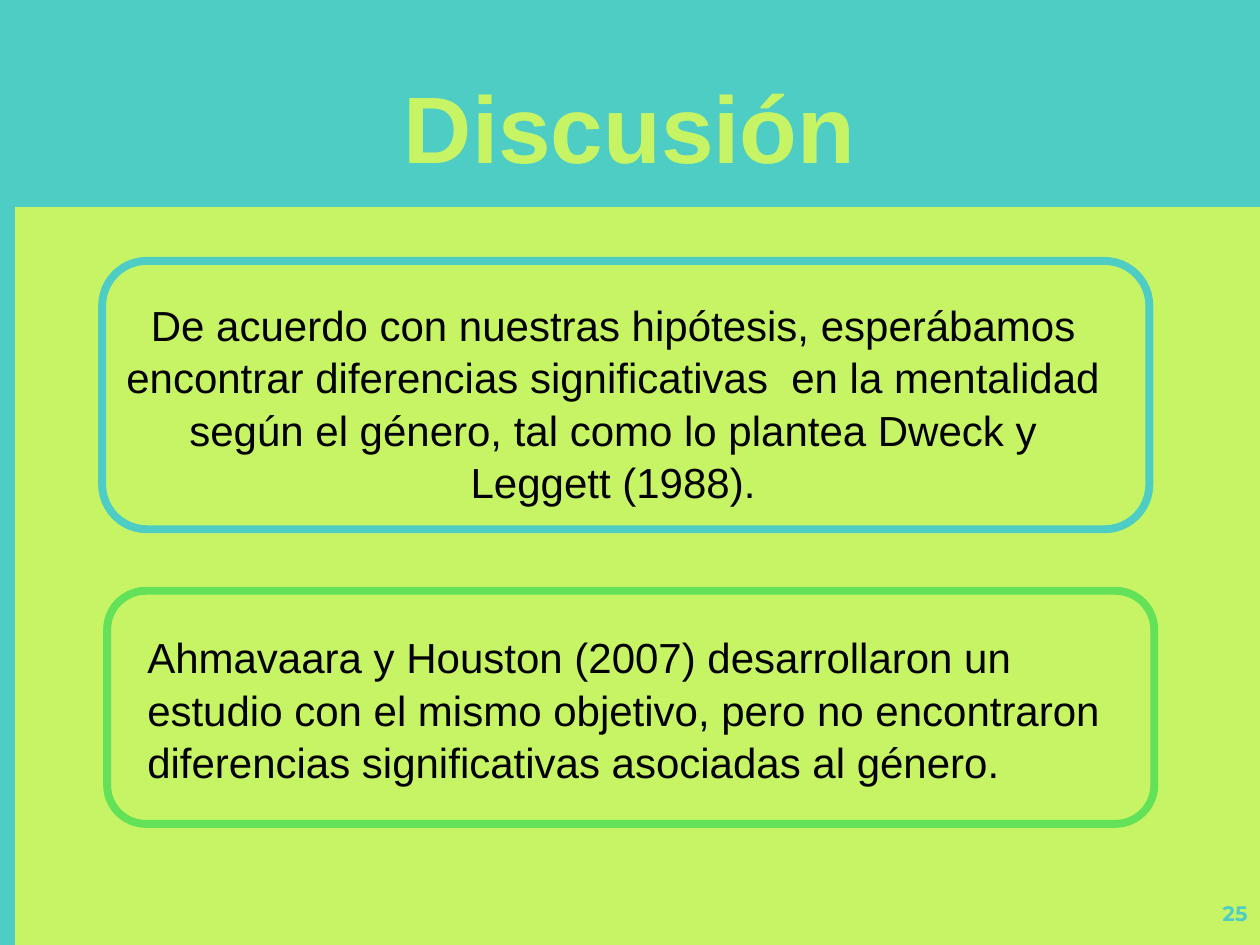
from pptx import Presentation
from pptx.dml.color import RGBColor
from pptx.enum.shapes import MSO_AUTO_SHAPE_TYPE as ShapeType
from pptx.enum.text import MSO_ANCHOR as Anchor, PP_ALIGN as Align
from pptx.util import Cm, Pt

WIDTH, HEIGHT = 25.4, 19.05
TEAL, LIME, GREEN, BLACK = "4ECDC4", "C7F464", "63E159", "000000"
HYPOTHESIS = (
    "De acuerdo con nuestras hipótesis, esperábamos encontrar diferencias "
    "significativas  en la mentalidad según el género, tal como lo plantea "
    "Dweck y Leggett (1988)."
)
PRIOR_STUDY = (
    "Ahmavaara y Houston (2007) desarrollaron un estudio con el mismo objetivo, "
    "pero no encontraron diferencias significativas asociadas al género."
)


def paint(color_format, color):
    """Apply a hex colour to a fill or font colour."""
    color_format.rgb = RGBColor.from_string(color)


def add_band(slide, width, height):
    """Add a solid teal band from the top left corner."""
    shape = slide.shapes.add_shape(ShapeType.RECTANGLE, 0, 0, Cm(width), Cm(height))
    shape.shadow.inherit = False
    shape.fill.solid()
    paint(shape.fill.fore_color, TEAL)
    shape.line.fill.background()


def add_frame(slide, box, color):
    """Add an unfilled rounded frame."""
    shape = slide.shapes.add_shape(ShapeType.ROUNDED_RECTANGLE, *map(Cm, box))
    shape.shadow.inherit = False
    shape.fill.background()
    paint(shape.line.color, color)
    shape.line.width = Pt(4.5)


def write(shape, text, size, color, align=Align.LEFT, font="Arial", bold=False):
    """Write one formatted run at the top of a shape and return its paragraph."""
    frame = shape.text_frame
    frame.word_wrap = True
    frame.vertical_anchor = Anchor.TOP
    paragraph = frame.paragraphs[0]
    paragraph.alignment = align
    run = paragraph.add_run()
    run.text = text
    run.font.name, run.font.size, run.font.bold = font, Pt(size), bold
    paint(run.font.color, color)
    return paragraph


def add_statement(slide, box, text, align):
    """Add a body statement in a text box."""
    shape = slide.shapes.add_textbox(*map(Cm, box))
    write(shape, text, 24, BLACK, align).line_spacing = 1.04


def add_page_number(slide, number):
    """Add the page number in the bottom right corner."""
    width, height = 1.52, 1.14
    shape = slide.shapes.add_textbox(
        Cm(WIDTH - width), Cm(HEIGHT - height), Cm(width), Cm(height))
    frame = shape.text_frame
    frame.margin_left = frame.margin_right = Cm(0.25)
    frame.margin_top = frame.margin_bottom = Cm(0.25)
    write(shape, number, 12, TEAL, Align.RIGHT, "Montserrat", True)


def set_title(slide, box, text):
    """Place the title placeholder in front of the header band."""
    title = slide.shapes.title
    title.left, title.top, title.width, title.height = map(Cm, box)
    write(title, text, 54, LIME, Align.CENTER, bold=True)
    title.text_frame.word_wrap = False
    slide.shapes.element.append(title.element)


def main():
    """Build and save the discussion slide."""
    presentation = Presentation()
    presentation.slide_width, presentation.slide_height = Cm(WIDTH), Cm(HEIGHT)
    slide = presentation.slides.add_slide(presentation.slide_layouts[5])
    slide.background.fill.solid()
    paint(slide.background.fill.fore_color, LIME)

    add_frame(slide, (2.16, 11.91, 21.11, 4.7), GREEN)
    add_frame(slide, (2.06, 5.26, 21.11, 5.41), TEAL)
    add_page_number(slide, "25")
    add_statement(slide, (2.06, 5.87, 20.6, 4.37), HYPOTHESIS, Align.CENTER)
    add_band(slide, 0.3, HEIGHT)
    add_statement(slide, (2.72, 12.57, 20.04, 4.7), PRIOR_STUDY, Align.LEFT)
    add_band(slide, WIDTH, 4.17)
    set_title(slide, (7.87, 1.27, 9.65, 2.57), "Discusión")
    presentation.save("out.pptx")


if __name__ == "__main__":
    main()
